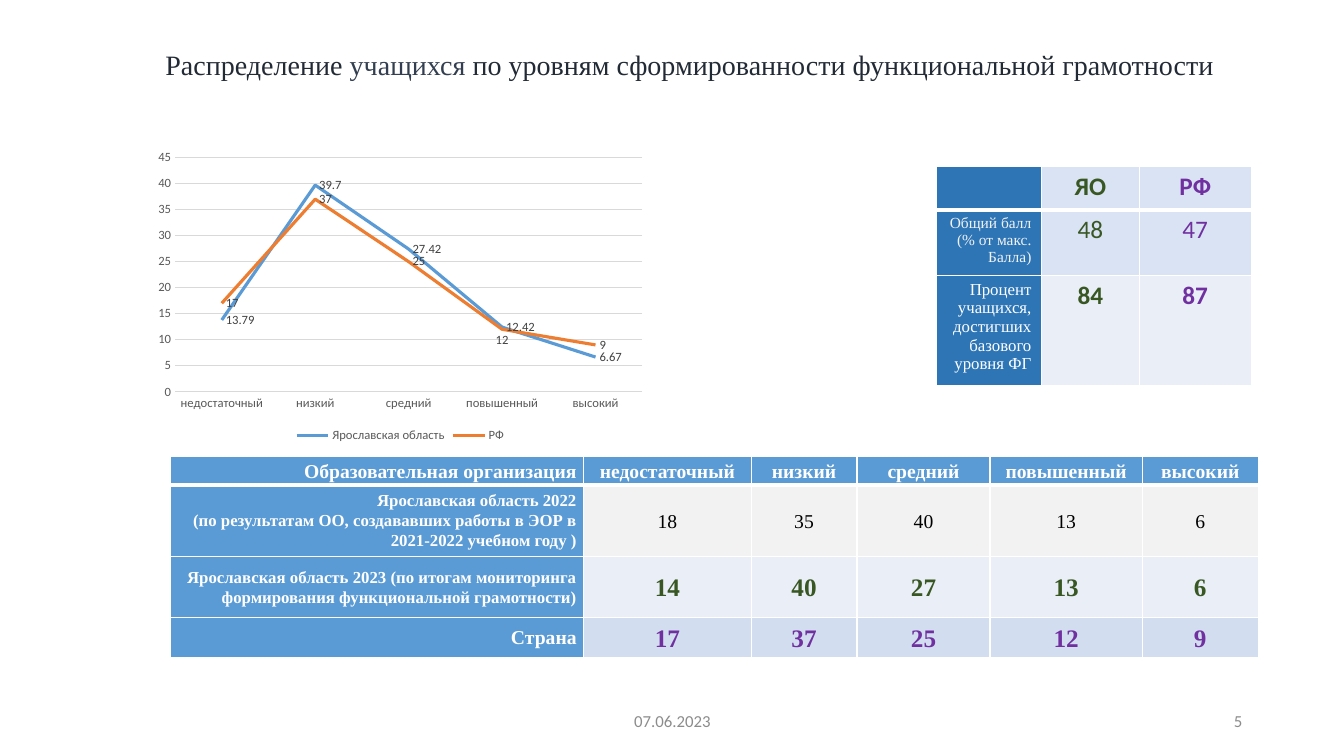
from pptx import Presentation
from pptx.chart.data import CategoryChartData
from pptx.dml.color import RGBColor
from pptx.enum.chart import XL_CHART_TYPE, XL_LABEL_POSITION, XL_LEGEND_POSITION, XL_MARKER_STYLE, XL_TICK_MARK
from pptx.enum.text import MSO_ANCHOR, PP_ALIGN
from pptx.oxml import parse_xml
from pptx.oxml.ns import nsdecls
from pptx.util import Inches, Pt

WHITE = RGBColor(0xFF, 0xFF, 0xFF)
BLACK = RGBColor(0x00, 0x00, 0x00)
NAVY = RGBColor(0x22, 0x2A, 0x35)
SLATE = RGBColor(0x33, 0x3F, 0x50)
BLUE = RGBColor(0x5B, 0x9B, 0xD5)
DEEP_BLUE = RGBColor(0x2E, 0x75, 0xB6)
ORANGE = RGBColor(0xED, 0x7D, 0x31)
GREEN = RGBColor(0x38, 0x57, 0x23)
PURPLE = RGBColor(0x70, 0x30, 0xA0)
LAVENDER = RGBColor(0xDA, 0xE3, 0xF3)
PALE_BLUE = RGBColor(0xEA, 0xEF, 0xF7)
SOFT_BLUE = RGBColor(0xD2, 0xDE, 0xEF)
PALE_GREY = RGBColor(0xF2, 0xF2, 0xF2)
GRID_GREY = RGBColor(0xD9, 0xD9, 0xD9)
AXIS_GREY = RGBColor(0x59, 0x59, 0x59)
LABEL_GREY = RGBColor(0x40, 0x40, 0x40)
FOOTER_GREY = RGBColor(0x8C, 0x8C, 0x8C)

SERIF, SANS = "Times New Roman", "Calibri"
LEVELS = ["недостаточный", "низкий", "средний", "повышенный", "высокий"]


def set_font(font, size, color, name=SANS, bold=False):
    font.size, font.name, font.bold = Pt(size), name, bold
    font.color.rgb = color


def write(frame, text, align=PP_ALIGN.LEFT, spacing=1.0, **style):
    """Fill a frame; each line is a string or a list of (string, colour) spans."""
    frame.word_wrap = True
    lines = text.split("\n") if isinstance(text, str) else [text]
    for index, line in enumerate(lines):
        para = frame.paragraphs[0] if index == 0 else frame.add_paragraph()
        para.alignment, para.line_spacing = align, spacing
        spans = [(line, style.get("color"))] if isinstance(line, str) else line
        for words, color in spans:
            span = para.add_run()
            span.text = words
            set_font(span.font, **{**style, "color": color})


def paint_cell(cell, fill, bottom=1):
    """Fill a cell and give it white borders."""
    cell.fill.solid()
    cell.fill.fore_color.rgb = fill
    properties = cell._tc.get_or_add_tcPr()
    for index, (side, width) in enumerate(zip("LRTB", (1, 1, 1, bottom))):
        properties.insert(index, parse_xml(
            f'<a:ln{side} {nsdecls("a")} w="{Pt(width)}"><a:solidFill>'
            f'<a:srgbClr val="{WHITE}"/></a:solidFill></a:ln{side}>'))


def add_grid(page, box, widths, heights):
    table = page.shapes.add_table(len(heights), len(widths), *map(Inches, box)).table
    table.first_row = table.horz_banding = False
    for column, width in zip(table.columns, widths):
        column.width = Inches(width)
    for row, height in zip(table.rows, heights):
        row.height = Inches(height)
    return table


def add_title(page, box):
    title = page.shapes.title
    title.left, title.top, title.width, title.height = map(Inches, box)
    title.text_frame.vertical_anchor = MSO_ANCHOR.TOP
    write(title.text_frame, [
        ("Распределение ", NAVY), ("учащихся", SLATE),
        (" по уровням сформированности функциональной грамотности", NAVY)],
        size=20, name=SERIF)


def add_level_chart(page, box):
    data = CategoryChartData()
    data.categories = LEVELS
    data.add_series("Ярославская область", (13.79, 39.7, 27.42, 12.42, 6.67))
    data.add_series("РФ", (17, 37, 25, 12, 9))
    chart = page.shapes.add_chart(XL_CHART_TYPE.LINE, *map(Inches, box), data).chart
    set_font(chart.font, 10, BLACK)
    chart.has_title = False

    # Legend and axes
    chart.has_legend = True
    chart.legend.position = XL_LEGEND_POSITION.BOTTOM
    chart.legend.include_in_layout = False
    set_font(chart.legend.font, 9, AXIS_GREY)
    levels, values = chart.category_axis, chart.value_axis
    for axis in (levels, values):
        axis.major_tick_mark = axis.minor_tick_mark = XL_TICK_MARK.NONE
        set_font(axis.tick_labels.font, 9, AXIS_GREY)
    values.minimum_scale, values.maximum_scale, values.major_unit = 0, 45, 5
    values.format.line.fill.background()
    for line in (levels.format.line, values.major_gridlines.format.line):
        line.color.rgb, line.width = GRID_GREY, Pt(0.75)

    # Lines and their labels
    for series, color in zip(chart.plots[0].series, (BLUE, ORANGE)):
        series.smooth = False
        series.marker.style = XL_MARKER_STYLE.NONE
        series.format.line.color.rgb, series.format.line.width = color, Pt(2.25)
        labels = series.data_labels
        labels.show_value, labels.position = True, XL_LABEL_POSITION.RIGHT
        set_font(labels.font, 9, LABEL_GREY)
    lower_label = chart.plots[0].series[1].points[3].data_label
    set_font(lower_label.font, 9, LABEL_GREY)
    lower_label.position = XL_LABEL_POSITION.BELOW


def add_score_table(page, box):
    table = add_grid(page, box, (1.04, 0.97, 1.11), (0.43, 0.65, 1.1))
    # Heading, its size, two values, bold, fill
    rows = [
        ("", 12, ("ЯО", "РФ"), True, LAVENDER),
        ("Общий балл\n(% от макс. Балла)", 11, ("48", "47"), False, LAVENDER),
        ("Процент учащихся, достигших базового уровня ФГ", 12, ("84", "87"), True, PALE_BLUE),
    ]
    for index, (heading, size, scores, bold, fill) in enumerate(rows):
        bottom = 3 if index == 0 else 1
        first = table.cell(index, 0)
        paint_cell(first, DEEP_BLUE, bottom)
        if heading:
            write(first.text_frame, heading, align=PP_ALIGN.RIGHT, size=size, name=SERIF,
                  color=PALE_GREY if size == 11 else WHITE)
        for column, (score, color) in enumerate(zip(scores, (GREEN, PURPLE)), 1):
            cell = table.cell(index, column)
            paint_cell(cell, fill, bottom)
            write(cell.text_frame, score, align=PP_ALIGN.CENTER, size=18, color=color, bold=bold)


def add_level_table(page, box):
    table = add_grid(page, box, (4.1, 1.66, 1.05, 1.32, 1.51, 1.15), (0.28, 0.71, 0.61, 0.39))
    # Heading, its size, values, then their size, colour, weight and fill
    rows = [
        ("Образовательная организация", 14, LEVELS, 14, WHITE, True, BLUE),
        ("Ярославская область 2022\n(по результатам ОО, создававших работы в ЭОР в "
         "2021-2022 учебном году )", 12, (18, 35, 40, 13, 6), 14, BLACK, False, PALE_GREY),
        ("Ярославская область 2023 (по итогам мониторинга формирования функциональной "
         "грамотности)", 12, (14, 40, 27, 13, 6), 18, GREEN, True, PALE_BLUE),
        ("Страна", 14, (17, 37, 25, 12, 9), 18, PURPLE, True, SOFT_BLUE),
    ]
    for index, (heading, heading_size, values, size, color, bold, fill) in enumerate(rows):
        for column, value in enumerate((heading, *values)):
            cell = table.cell(index, column)
            cell.margin_left = cell.margin_right = Inches(0.07)
            cell.margin_top = cell.margin_bottom = 0
            cell.vertical_anchor = MSO_ANCHOR.MIDDLE
            paint_cell(cell, fill if column else BLUE, 3 if index == 0 else 1)
            if column:
                style = dict(align=PP_ALIGN.CENTER, size=size, color=color, bold=bold)
            else:
                style = dict(align=PP_ALIGN.RIGHT, size=heading_size, color=WHITE, bold=True)
            write(cell.text_frame, str(value), spacing=1.07, name=SERIF, **style)


def add_footer(page, box, text, align):
    frame = page.shapes.add_textbox(*map(Inches, box)).text_frame
    frame.vertical_anchor = MSO_ANCHOR.MIDDLE
    write(frame, text, align=align, size=12, color=FOOTER_GREY)


def main():
    deck = Presentation()
    deck.slide_width, deck.slide_height = Inches(13.33), Inches(7.5)
    page = deck.slides.add_slide(deck.slide_layouts[5])
    page.background.fill.solid()
    page.background.fill.fore_color.rgb = WHITE
    add_level_table(page, (1.69, 4.53, 10.78, 1.99))
    add_score_table(page, (9.29, 1.65, 3.13, 2.18))
    add_level_chart(page, (1.47, 1.43, 5, 3))
    add_title(page, (1.54, 0.42, 11.58, 0.44))
    add_footer(page, (4.42, 6.95, 4.5, 0.4), "07.06.2023", PP_ALIGN.CENTER)
    add_footer(page, (9.42, 6.95, 3, 0.4), "5", PP_ALIGN.RIGHT)
    deck.save("out.pptx")


if __name__ == "__main__":
    main()
